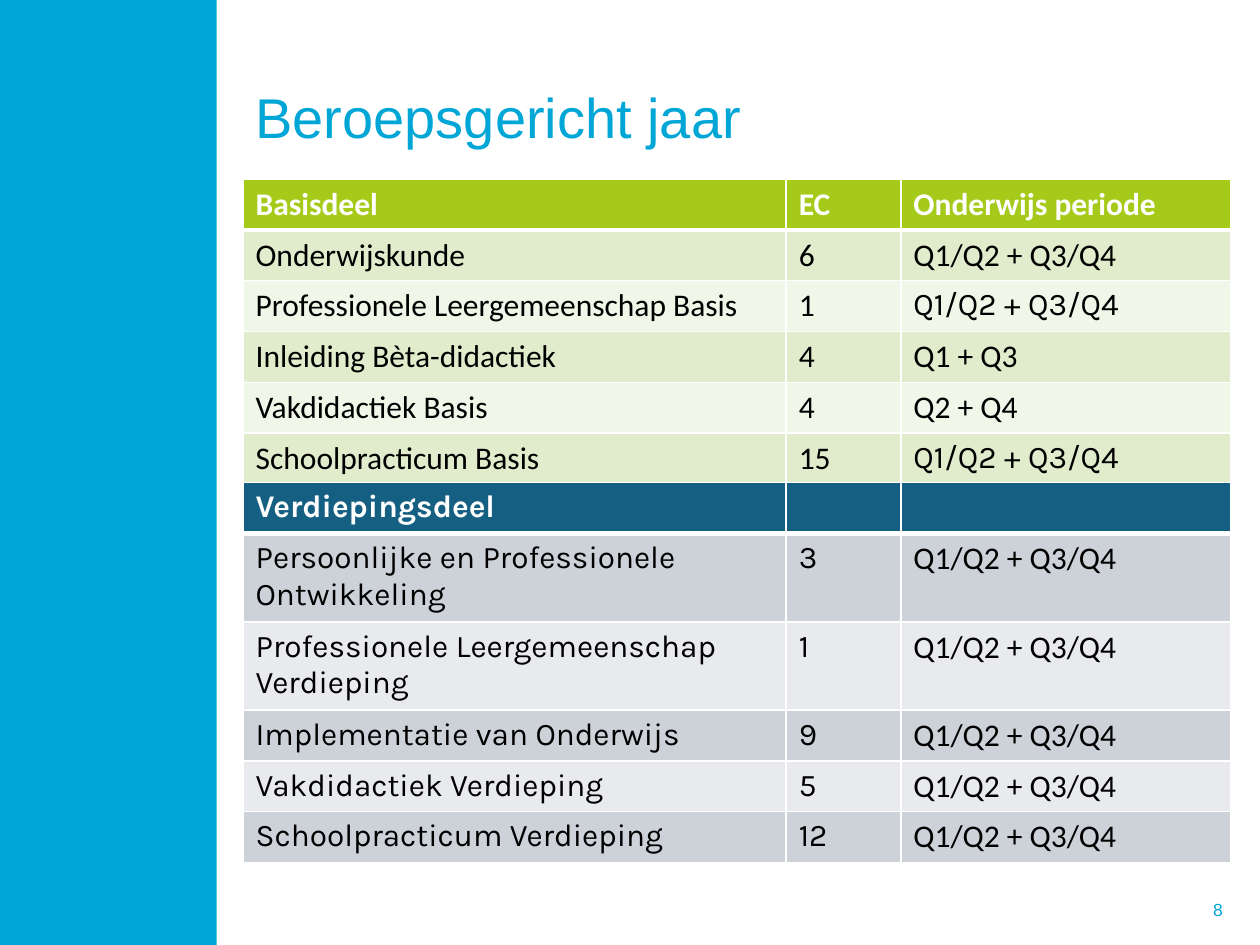
from lxml.etree import SubElement
from pptx import Presentation
from pptx.dml.color import RGBColor
from pptx.enum.shapes import MSO_SHAPE
from pptx.enum.text import MSO_ANCHOR, PP_ALIGN
from pptx.oxml.ns import qn
from pptx.util import Cm, Pt

COLORS = {
    "cyan": "00A6D6", "white": "FFFFFF", "black": "000000",
    "green": "A5CA1A", "green_dark": "E1ECCD", "green_light": "F0F6E8",
    "blue": "156082", "blue_dark": "CCD2D8", "blue_light": "E8EAED",
}
COLUMN_WIDTHS = (10.95, 2.31, 6.65)
ROW, TALL_ROW = 1.025, 1.78
BOTH_HALVES = "Q1/Q2 + Q3/Q4"

BASIC_ROWS = [
    ("Basisdeel", "EC", "Onderwijs periode"),
    ("Onderwijskunde", "6", BOTH_HALVES),
    ("Professionele Leergemeenschap Basis", "1", BOTH_HALVES),
    ("Inleiding Bèta-didactiek", "4", "Q1 + Q3"),
    ("Vakdidactiek Basis", "4", "Q2 + Q4"),
    ("Schoolpracticum Basis", "15", BOTH_HALVES),
]
ADVANCED_ROWS = [
    ("Verdiepingsdeel", "", ""),
    ("Persoonlijke en Professionele Ontwikkeling", "3", BOTH_HALVES),
    ("Professionele Leergemeenschap Verdieping", "1", BOTH_HALVES),
    ("Implementatie van Onderwijs", "9", BOTH_HALVES),
    ("Vakdidactiek Verdieping", "5", BOTH_HALVES),
    ("Schoolpracticum Verdieping", "12", BOTH_HALVES),
]


def color(name):
    return RGBColor.from_string(COLORS[name])


def write(frame, text, *, font="Arial", size=18, ink="black", bold=False,
          align=PP_ALIGN.LEFT):
    """Put one formatted paragraph in a text frame."""
    para = frame.paragraphs[0]
    para.alignment = align
    para.font.size = Pt(size)
    if text:
        span = para.add_run()
        span.text = text
        span.font.name = font
        span.font.size = Pt(size)
        span.font.bold = bold
        span.font.color.rgb = color(ink)


def set_borders(cell, **widths):
    """Draw white cell borders; widths in points by side: L, R, T, B."""
    properties = cell._tc.get_or_add_tcPr()
    for side, width in widths.items():
        line = SubElement(properties, qn(f"a:ln{side}"), w=str(Pt(width)))
        fill = SubElement(line, qn("a:solidFill"))
        SubElement(fill, qn("a:srgbClr"), val=COLORS["white"])


class SlideBuilder:
    def __init__(self, page):
        self.page = page

    def band(self, left, top, width, height, fill):
        shape = self.page.shapes.add_shape(
            MSO_SHAPE.RECTANGLE, Cm(left), Cm(top), Cm(width), Cm(height))
        shape.shadow.inherit = False
        shape.fill.solid()
        shape.fill.fore_color.rgb = color(fill)
        shape.line.fill.background()

    def text(self, left, top, width, height, text, **style):
        box = self.page.shapes.add_textbox(Cm(left), Cm(top), Cm(width), Cm(height))
        box.text_frame.word_wrap = True
        box.text_frame.vertical_anchor = MSO_ANCHOR.MIDDLE
        write(box.text_frame, text, **style)

    def table(self, left, top, rows, heights, hue, fonts, exceptions=None):
        """Add a table with a header and bands; exceptions map (row, column) to a font."""
        exceptions = exceptions or {}
        table = self.page.shapes.add_table(
            len(rows), len(COLUMN_WIDTHS), Cm(left), Cm(top),
            Cm(sum(COLUMN_WIDTHS)), Cm(sum(heights))).table
        for column, width in zip(table.columns, COLUMN_WIDTHS):
            column.width = Cm(width)
        for r, (values, height) in enumerate(zip(rows, heights)):
            table.rows[r].height = Cm(height)
            header = r == 0
            fill = hue if header else f"{hue}_{'dark' if r % 2 else 'light'}"
            for c, value in enumerate(values):
                cell = table.cell(r, c)
                set_borders(cell, L=1, R=1, T=3 if r == 1 else 1, B=3 if header else 1)
                cell.fill.solid()
                cell.fill.fore_color.rgb = color(fill)
                write(cell.text_frame, value, font=exceptions.get((r, c), fonts[c]),
                      ink="white" if header else "black", bold=header)


def main():
    deck = Presentation()
    deck.slide_width, deck.slide_height = Cm(25.4), Cm(19.05)
    slide = SlideBuilder(deck.slides.add_slide(deck.slide_layouts[6]))

    # Side band, page number and title
    slide.band(0, 0, 4.37, 19.05, "cyan")
    slide.text(18.47, 17.83, 6.43, 1.02, "8", size=10, ink="cyan", align=PP_ALIGN.RIGHT)
    slide.text(4.9, 0.76, 19.74, 3.18, "Beroepsgericht jaar", size=32, ink="cyan")

    # Basic and advanced course tables
    slide.table(4.9, 3.61, BASIC_ROWS, [ROW] * 6, "green", ["Calibri"] * 3,
                exceptions={(2, 2): "Karla", (5, 2): "Karla"})
    slide.table(4.9, 9.73, ADVANCED_ROWS, [ROW] + [TALL_ROW] * 2 + [ROW] * 3, "blue",
                ["Karla", "Karla", "Calibri"])

    deck.save("out.pptx")


if __name__ == "__main__":
    main()
